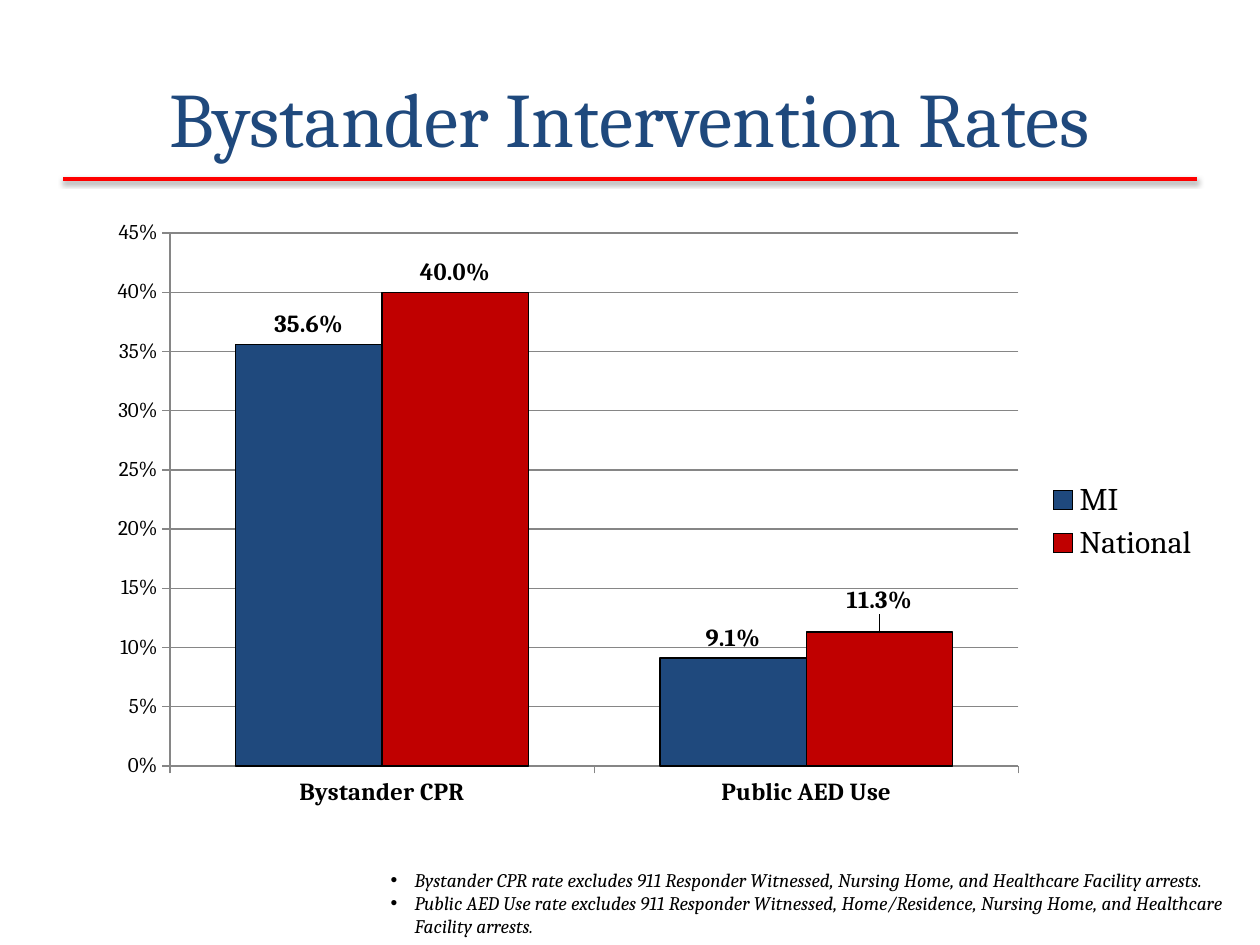
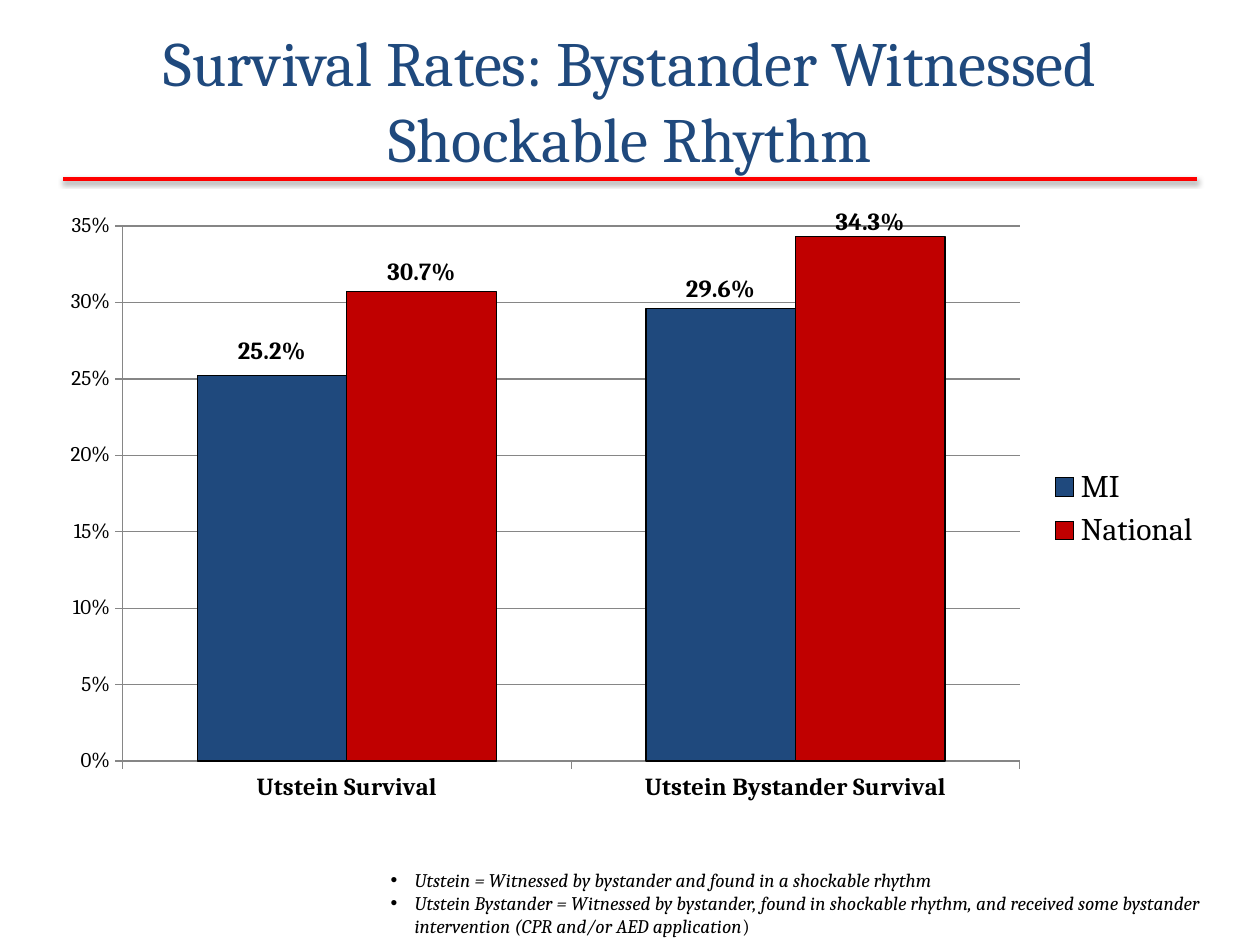
from dataclasses import dataclass, field

from lxml.etree import SubElement
from pptx import Presentation
from pptx.chart.data import CategoryChartData
from pptx.dml.color import RGBColor
from pptx.enum.chart import (XL_CHART_TYPE, XL_LABEL_POSITION,
                             XL_LEGEND_POSITION, XL_TICK_MARK)
from pptx.enum.shapes import MSO_CONNECTOR
from pptx.enum.text import MSO_ANCHOR, MSO_AUTO_SIZE, PP_ALIGN
from pptx.oxml import parse_xml
from pptx.oxml.ns import nsdecls, qn
from pptx.util import Emu, Pt

EMU_PER_PX = 9144  # 100 px to the inch
FONT = "Cambria"
NAVY, CRIMSON, RED, BLACK, GREY = "1F497D", "C00000", "FF0000", "000000", "868686"
SERIES_COLORS = {"MI": NAVY, "National": CRIMSON}
NOTES_BOX = (300, 684, 700, 66)
HANG = 19
RULE_Y = 142


@dataclass
class RateSlide:
    title: str
    title_size: int
    title_box: tuple[int, int, int, int]
    chart_box: tuple[int, int, int, int]
    plot: tuple[float, float, float, float]
    gap: int
    top: float
    rates: dict[str, tuple[float, float]]  # category: (MI, National)
    notes: list[list[tuple[str, bool]]]  # runs of (text, italic)
    label_lifts: dict[tuple[str, int], int] = field(default_factory=dict)


SLIDES = [
    RateSlide(
        "Bystander Intervention Rates", 44, (50, 30, 900, 125),
        (58, 164, 904, 500), (0.085, 0.042, 0.745, 0.846), 90, 0.45,
        {"Bystander CPR": (0.356, 0.4), "Public AED Use": (0.091, 0.113)},
        [[("Bystander CPR rate excludes 911 Responder Witnessed, Nursing Home, "
           "and Healthcare Facility arrests.", True)],
         [("Public AED Use rate excludes 911 Responder Witnessed, Home/Residence, "
           "Nursing Home, and Healthcare Facility arrests.", True)]],
        {("National", 1): 10}),
    RateSlide(
        "Survival Rates: Bystander Witnessed Shockable Rhythm", 36,
        (50, 25, 900, 108), (38, 161, 925, 486), (0.064, 0.038, 0.77, 0.874),
        100, 0.35,
        {"Utstein Survival": (0.252, 0.307),
         "Utstein Bystander Survival": (0.296, 0.343)},
        [[("Utstein = Witnessed by bystander and found in a shockable rhythm", True)],
         [("Utstein Bystander = Witnessed by bystander, found in shockable rhythm, "
           "and received some bystander intervention (CPR and/or AED application", True),
          (")", False)]],
        {("MI", 0): 4, ("National", 1): -4}),
]


def px(n: int) -> Emu:
    return Emu(n * EMU_PER_PX)


def rgb(color: str) -> RGBColor:
    return RGBColor.from_string(color)


def set_font(font, size: int, color: str = BLACK, **styles) -> None:
    for name, value in {"name": FONT, "size": Pt(size), **styles}.items():
        setattr(font, name, value)
    font.color.rgb = rgb(color)


def set_line(line, color: str, width: float) -> None:
    line.color.rgb = rgb(color)
    line.width = Pt(width)


def place(sp, box: tuple[int, int, int, int]) -> None:
    for name, n in zip(("left", "top", "width", "height"), box):
        setattr(sp, name, px(n))


def add_rule(s) -> None:
    """Draw the red line under the title with its soft shadow."""
    rule = s.shapes.add_connector(MSO_CONNECTOR.STRAIGHT,
                                  px(50), px(RULE_Y), px(950), px(RULE_Y))
    set_line(rule.line, RED, 2)
    rule._element.spPr.append(parse_xml(
        f'<a:effectLst {nsdecls("a")}><a:outerShdw blurRad="{Pt(3.1)}" '
        f'dist="{Pt(1.6)}" dir="5400000" rotWithShape="0"><a:srgbClr val="{BLACK}">'
        '<a:alpha val="38000"/></a:srgbClr></a:outerShdw></a:effectLst>'))


def fill_title(sp, spec: RateSlide) -> None:
    place(sp, spec.title_box)
    tf = sp.text_frame
    tf.auto_size = MSO_AUTO_SIZE.NONE
    tf.vertical_anchor = MSO_ANCHOR.MIDDLE
    p = tf.paragraphs[0]
    p.alignment = PP_ALIGN.CENTER
    r = p.add_run()
    r.text = spec.title
    set_font(r.font, spec.title_size, NAVY)


def fill_notes(sp, notes: list[list[tuple[str, bool]]]) -> None:
    place(sp, NOTES_BOX)
    tf = sp.text_frame
    tf.auto_size = MSO_AUTO_SIZE.NONE
    for i, runs in enumerate(notes):
        p = tf.add_paragraph() if i else tf.paragraphs[0]
        p.space_before = Pt(0)
        pPr = p._p.get_or_add_pPr()
        pPr.set("marL", str(px(HANG)))
        pPr.set("indent", str(px(-HANG)))
        SubElement(pPr, qn("a:buFont")).set("typeface", "Arial")
        SubElement(pPr, qn("a:buChar")).set("char", "•")
        for text, italic in runs:
            r = p.add_run()
            r.text = text
            set_font(r.font, 11, italic=italic)


def manual_layout(**values: float):
    items = "".join(f'<c:{k} val="{v}"/>' for k, v in values.items())
    return parse_xml(f'<c:layout {nsdecls("c")}><c:manualLayout>{items}'
                     '</c:manualLayout></c:layout>')


def place_plot(chart, plot: tuple[float, float, float, float]) -> None:
    layout = manual_layout(layoutTarget="inner", xMode="edge", yMode="edge",
                           **dict(zip("xywh", plot)))
    area = chart._chartSpace.chart.plotArea
    for old in area.findall(qn("c:layout")):
        area.remove(old)
    area.insert(0, layout)


def lift_label(series, index: int, fraction: float) -> None:
    """Move one data label up by a fraction of the chart's height."""
    label = series.points[index].data_label
    set_font(label.font, 14, bold=True)
    label.position = XL_LABEL_POSITION.OUTSIDE_END
    dLbl = label._dLbl
    dLbl.insert(1, manual_layout(x=0, y=round(-fraction, 3)))
    dLbl.insert(2, parse_xml(f'<c:numFmt {nsdecls("c")} formatCode="0.0%" '
                             'sourceLinked="0"/>'))


def style_axes(chart, top: float) -> None:
    category, value = chart.category_axis, chart.value_axis
    for axis, size, bold in ((category, 14, True), (value, 12, False)):
        axis.major_tick_mark = XL_TICK_MARK.OUTSIDE
        axis.minor_tick_mark = XL_TICK_MARK.NONE
        set_line(axis.format.line, GREY, 0.75)
        set_font(axis.tick_labels.font, size, bold=bold)
    for name, n in {"minimum_scale": 0, "maximum_scale": top,
                    "major_unit": 0.05, "has_major_gridlines": True}.items():
        setattr(value, name, n)
    value.tick_labels.number_format = "0%"
    value.tick_labels.number_format_is_linked = False
    set_line(value.major_gridlines.format.line, GREY, 0.75)


def add_rates_chart(s, spec: RateSlide) -> None:
    data = CategoryChartData(number_format="0.0%")
    data.categories = list(spec.rates)
    for name, values in zip(SERIES_COLORS, zip(*spec.rates.values())):
        data.add_series(name, values)
    chart = s.shapes.add_chart(XL_CHART_TYPE.COLUMN_CLUSTERED,
                               *map(px, spec.chart_box), data).chart
    set_font(chart.font, 18)
    chart.has_title = False
    chart.has_legend = True
    chart.legend.position = XL_LEGEND_POSITION.RIGHT
    chart.legend.include_in_layout = False
    set_font(chart.legend.font, 18)
    style_axes(chart, spec.top)
    place_plot(chart, spec.plot)

    bars = chart.plots[0]
    bars.gap_width, bars.overlap, bars.vary_by_categories = spec.gap, 0, False
    for series in bars.series:
        series.format.fill.solid()
        series.format.fill.fore_color.rgb = rgb(SERIES_COLORS[series.name])
        set_line(series.format.line, BLACK, 0.75)
        labels = series.data_labels
        for name, value in {"show_value": True, "number_format": "0.0%",
                            "number_format_is_linked": False,
                            "position": XL_LABEL_POSITION.OUTSIDE_END}.items():
            setattr(labels, name, value)
        set_font(labels.font, 14, bold=True)
        for (name, index), lift in spec.label_lifts.items():
            if name == series.name:
                lift_label(series, index, lift / spec.chart_box[3])


def main() -> None:
    prs = Presentation()
    prs.slide_width, prs.slide_height = px(1000), px(750)
    for spec in SLIDES:
        s = prs.slides.add_slide(prs.slide_layouts[1])
        add_rule(s)
        fill_title(s.shapes.title, spec)
        add_rates_chart(s, spec)
        fill_notes(s.placeholders[1], spec.notes)
    prs.save("out.pptx")


if __name__ == "__main__":
    main()
